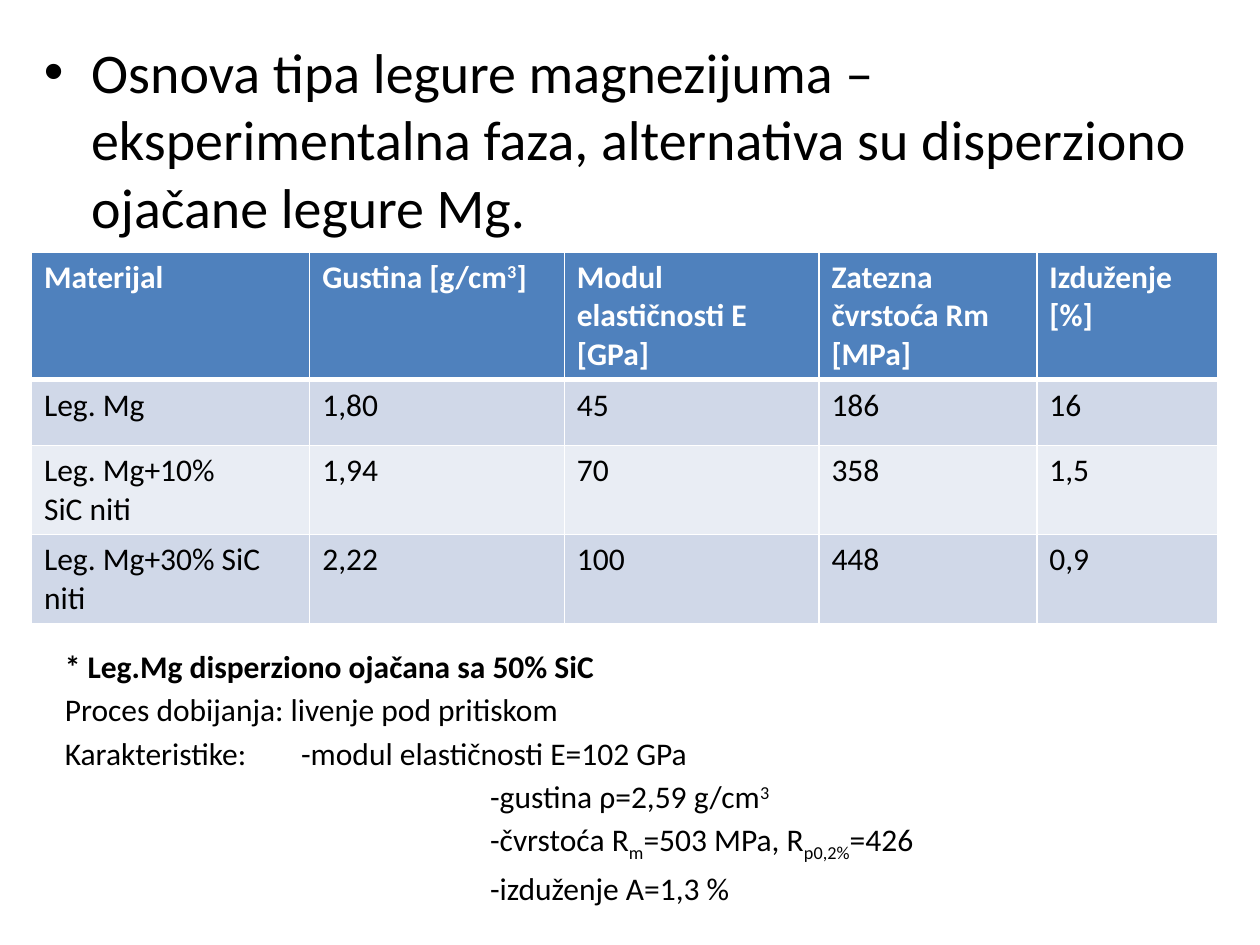
from lxml.etree import SubElement
from pptx import Presentation
from pptx.dml.color import RGBColor
from pptx.oxml.ns import qn
from pptx.util import Pt

THEME = {
    "font": "Calibri", "lead": 32, "body": 18,
    "text": "000000", "light": "FFFFFF", "header": "4F81BD",
    "bands": ("D0D8E8", "E9EDF4"),
}
SUP, SUB = 30, -25
HANG, DEEP = 27, 243

LEAD = "Osnova tipa legure magnezijuma – eksperimentalna faza, alternativa su disperziono ojačane legure Mg."
COLUMNS = (159, 145.5, 145.5, 124.5, 103.5)
ROW_HEIGHTS = (73, 37.5, 51, 51)
ROWS = [
    [["Materijal"], [[("Gustina [g/cm", 0), ("3", SUP), ("]", 0)]], ["Modul elastičnosti E [GPa]"],
     ["Zatezna čvrstoća Rm [MPa]"], ["Izduženje [%]"]],
    [["Leg. Mg"], ["1,80"], ["45"], ["186"], ["16"]],
    [["Leg. Mg+10%", "SiC niti"], ["1,94"], ["70"], ["358"], ["1,5"]],
    [["Leg. Mg+30% SiC niti"], ["2,22"], ["100"], ["448"], ["0,9"]],
]
NOTES = [
    ("* Leg.Mg disperziono ojačana sa 50% SiC", True, HANG, -HANG),
    ("Proces dobijanja: livenje pod pritiskom", False, HANG, -HANG),
    ("Karakteristike:\t-modul elastičnosti E=102 GPa", False, HANG, -HANG),
    ([("-gustina ρ=2,59 g/cm", 0), ("3", SUP)], False, DEEP, 0),
    ([("-čvrstoća R", 0), ("m", SUB), ("=503 MPa, R", 0), ("p0,2%", SUB), ("=426", 0)], False, DEEP, 0),
    ("-izduženje A=1,3 %", False, DEEP, 0),
]


def add_paragraph(tf, index, content, size, color, bold=False):
    p = tf.paragraphs[0] if index == 0 else tf.add_paragraph()
    p.font.name, p.font.size, p.font.bold = THEME["font"], Pt(size), bold
    p.font.color.rgb = RGBColor.from_string(color)
    for text, baseline in [(content, 0)] if isinstance(content, str) else content:
        r = p.add_run()
        r.text = text
        r.font.name, r.font.size, r.font.bold = THEME["font"], Pt(size), bold
        r.font.color.rgb = RGBColor.from_string(color)
        if baseline:
            r._r.get_or_add_rPr().set("baseline", str(baseline * 1000))
    return p


def indent(p, left, first):
    pPr = p._p.get_or_add_pPr()
    pPr.set("marL", str(Pt(left)))
    pPr.set("indent", str(Pt(first)))
    return pPr


def add_text_box(s, *box):
    tf = s.shapes.add_textbox(*map(Pt, box)).text_frame
    tf.word_wrap = True
    return tf


def set_borders(cell, widths):
    tcPr = cell._tc.get_or_add_tcPr()
    for side, width in widths.items():
        ln = SubElement(tcPr, qn(f"a:ln{side}"), w=str(Pt(width)))
        SubElement(SubElement(ln, qn("a:solidFill")), qn("a:srgbClr"), val=THEME["light"])


def add_lead(s):
    tf = add_text_box(s, 18, 18, 678, 464.4)
    p = add_paragraph(tf, 0, LEAD, THEME["lead"], THEME["text"])
    p.space_before = Pt(6.4)
    pPr = indent(p, HANG, -HANG)
    pPr.insert_element_before(pPr.makeelement(qn("a:buFont"), {"typeface": "Arial"}), "a:defRPr")
    pPr.insert_element_before(pPr.makeelement(qn("a:buChar"), {"char": "•"}), "a:defRPr")


def add_materials(s):
    frame = s.shapes.add_table(len(ROWS), len(COLUMNS), Pt(18), Pt(144), Pt(sum(COLUMNS)), Pt(sum(ROW_HEIGHTS)))
    table = frame.table
    for column, width in zip(table.columns, COLUMNS):
        column.width = Pt(width)
    for i, (row, height) in enumerate(zip(ROWS, ROW_HEIGHTS)):
        table.rows[i].height = Pt(height)
        header = i == 0
        fill = THEME["header"] if header else THEME["bands"][(i - 1) % 2]
        for j, lines in enumerate(row):
            cell = table.cell(i, j)
            set_borders(cell, {"L": 1, "R": 1, "T": 3 if i == 1 else 1, "B": 3 if header else 1})
            cell.fill.solid()
            cell.fill.fore_color.rgb = RGBColor.from_string(fill)
            for k, line in enumerate(lines):
                color = THEME["light"] if header else THEME["text"]
                add_paragraph(cell.text_frame, k, line, THEME["body"], color, header)


def add_notes(s):
    tf = add_text_box(s, 30, 366, 648, 162)
    for i, (content, bold, left, first) in enumerate(NOTES):
        p = add_paragraph(tf, i, content, THEME["body"], THEME["text"], bold)
        p.space_before = Pt(3.2)
        indent(p, left, first)


def main():
    prs = Presentation()
    prs.slide_width, prs.slide_height = Pt(720), Pt(540)
    s = prs.slides.add_slide(prs.slide_layouts[6])
    add_lead(s)
    add_materials(s)
    add_notes(s)
    prs.save("out.pptx")


if __name__ == "__main__":
    main()
